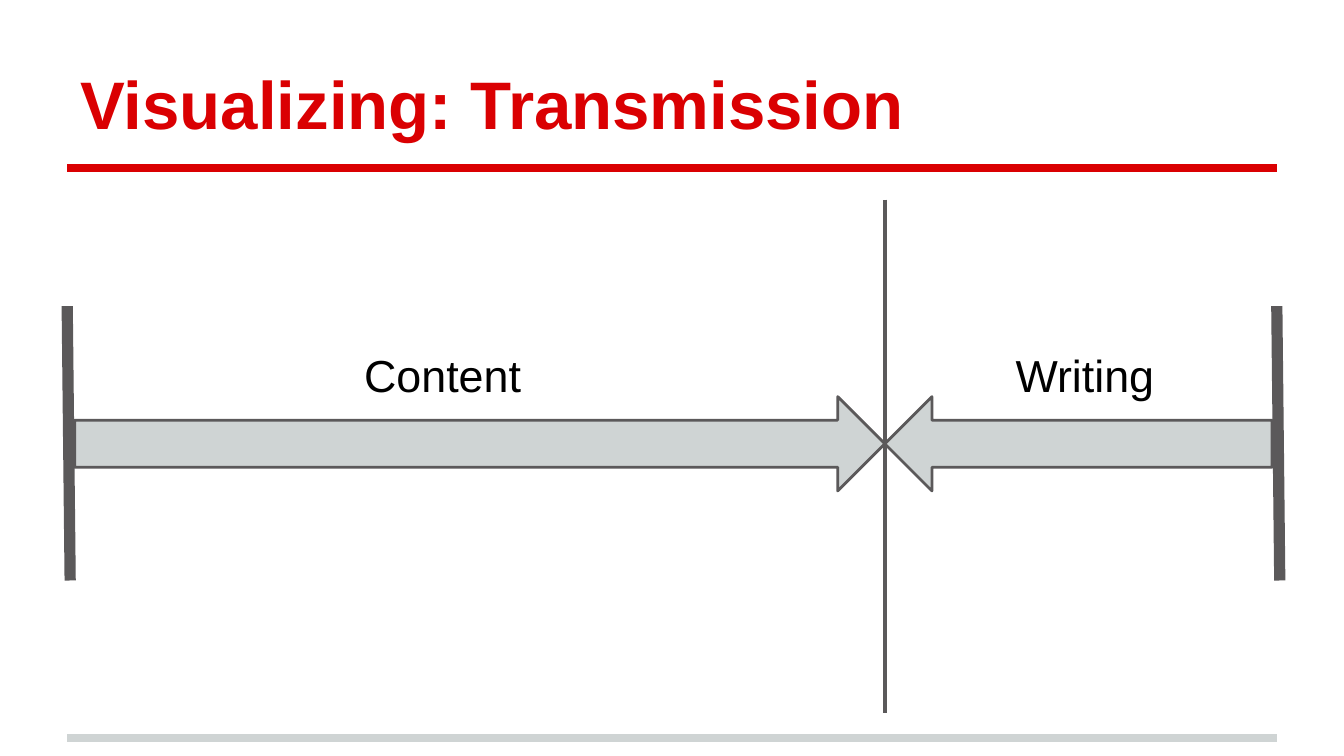
from pptx import Presentation
from pptx.dml.color import RGBColor
from pptx.enum.shapes import MSO_CONNECTOR, MSO_SHAPE
from pptx.enum.text import MSO_ANCHOR
from pptx.oxml.ns import qn
from pptx.util import Pt
from lxml.etree import SubElement

# Content
TITLE = "Visualizing: Transmission"
LABELS = [("Content", 188), ("Writing", 537)]  # text, left

# Layout in points
WIDTH, HEIGHT = 720, 405
LEFT, RIGHT = 36, 684
MEETING_X = 474
BAR_TOP, BAR_BOTTOM, BAR_LEAN = 164, 311, 1.6
ARROW_TOP, ARROW_HEIGHT = 212.5, 50.5
ARROW_START, ARROW_END = 40, 681.5
COLORS = {"red": "DA0002", "gray": "5B595A", "pale": "CFD4D4", "black": "000000"}

prs = Presentation()
prs.slide_width, prs.slide_height = Pt(WIDTH), Pt(HEIGHT)
slide = prs.slides.add_slide(prs.slide_layouts[6])


def rgb(name):
    return RGBColor.from_string(COLORS[name])


def add_line(x1, y1, x2, y2, color, width):
    s = slide.shapes.add_connector(
        MSO_CONNECTOR.STRAIGHT, Pt(x1), Pt(y1), Pt(x2), Pt(y2))
    s.line.color.rgb = rgb(color)
    s.line.width = Pt(width)
    SubElement(s._element.spPr, qn("a:effectLst"))


def add_arrow(kind, x1, x2):
    s = slide.shapes.add_shape(
        kind, Pt(x1), Pt(ARROW_TOP), Pt(x2 - x1), Pt(ARROW_HEIGHT))
    s.shadow.inherit = False
    s.fill.solid()
    s.fill.fore_color.rgb = rgb("pale")
    s.line.color.rgb = rgb("gray")
    s.line.width = Pt(1.5)


def add_text(text, x, y, w, h, size=24, color="black", bold=False,
             anchor=MSO_ANCHOR.TOP):
    tf = slide.shapes.add_textbox(Pt(x), Pt(y), Pt(w), Pt(h)).text_frame
    tf.word_wrap = True
    tf.vertical_anchor = anchor
    tf.margin_left = tf.margin_right = tf.margin_top = tf.margin_bottom = Pt(7.2)
    r = tf.paragraphs[0].add_run()
    r.text = text
    r.font.name, r.font.size, r.font.bold = "Arial", Pt(size), bold
    r.font.color.rgb = rgb(color)


# Footer rule, title rule and title
for y, color in [(395.5, "pale"), (90, "red")]:
    add_line(LEFT, y, RIGHT, y, color, 4)
add_text(TITLE, LEFT, 16.5, RIGHT - LEFT, 67.5, size=36, color="red", bold=True,
         anchor=MSO_ANCHOR.BOTTOM)

# End bars, leaning slightly
for x in (RIGHT, LEFT):
    add_line(x, BAR_TOP, x + BAR_LEAN, BAR_BOTTOM, "gray", 6)

# Arrows that meet at the divider
add_arrow(MSO_SHAPE.RIGHT_ARROW, ARROW_START, MEETING_X)
add_arrow(MSO_SHAPE.LEFT_ARROW, MEETING_X, ARROW_END)

# Arrow labels
for text, x in LABELS:
    add_text(text, x, 179, 119, 47)

# Divider
add_line(MEETING_X, 107, MEETING_X, 382, "gray", 2.25)

prs.save("out.pptx")
